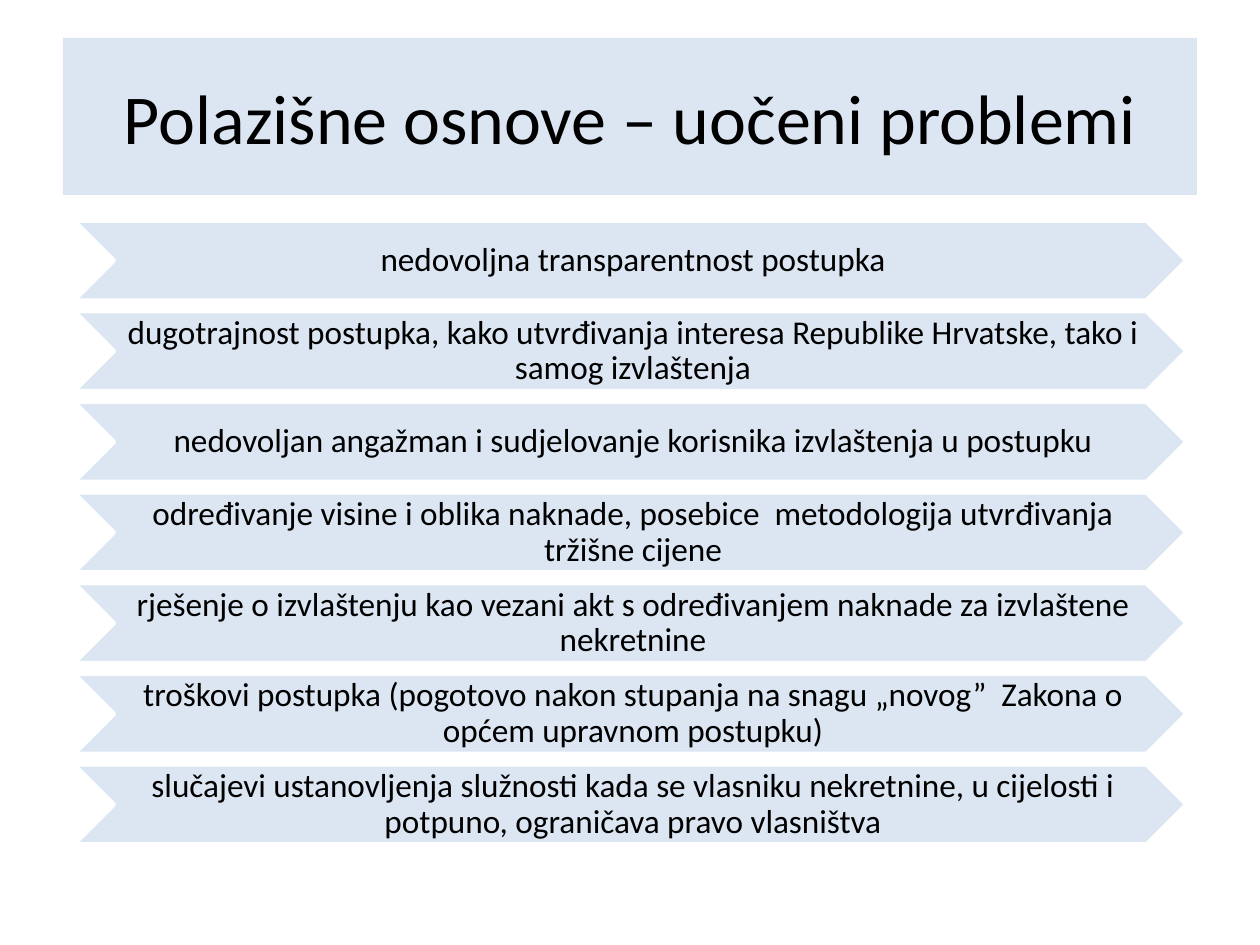
from dataclasses import dataclass

from pptx import Presentation
from pptx.dml.color import RGBColor as RGB
from pptx.enum.shapes import MSO_SHAPE as Shape
from pptx.enum.text import MSO_ANCHOR as Anchor, PP_ALIGN as Align
from pptx.util import Pt

PX = 914400 / 126


@dataclass(frozen=True)
class Theme:
    font: str = "Calibri"
    band: RGB = RGB(0xDC, 0xE6, 0xF2)
    edge: RGB = RGB(0xFF, 0xFF, 0xFF)
    ink: RGB = RGB(0, 0, 0)
    title_size: int = 40
    item_size: int = 19


THEME = Theme()

TITLE = "Polazišne osnove – uočeni problemi"
PROBLEMS = [
    "nedovoljna transparentnost postupka",
    "dugotrajnost postupka, kako utvrđivanja interesa Republike Hrvatske, tako i samog izvlaštenja",
    "nedovoljan angažman i sudjelovanje korisnika izvlaštenja u postupku",
    "određivanje visine i oblika naknade, posebice  metodologija utvrđivanja tržišne cijene",
    "rješenje o izvlaštenju kao vezani akt s određivanjem naknade za izvlaštene nekretnine",
    "troškovi postupka (pogotovo nakon stupanja na snagu „novog”  Zakona o općem upravnom postupku)",
    "slučajevi ustanovljenja služnosti kada se vlasniku nekretnine, u cijelosti i potpuno, "
    "ograničava pravo vlasništva",
]


def emu(*lengths):
    return [round(length * PX) for length in lengths]


def add_band(slide, kind, box):
    sp = slide.shapes.add_shape(kind, *emu(*box))
    sp.shadow.inherit = False
    sp.fill.solid()
    sp.fill.fore_color.rgb = THEME.band
    sp.line.fill.background()
    return sp


def write(sp, text, size, margins, spacing=1.0):
    tf = sp.text_frame
    tf.word_wrap = True
    tf.vertical_anchor = Anchor.MIDDLE
    tf.margin_left, tf.margin_top, tf.margin_right, tf.margin_bottom = emu(*margins)
    p = tf.paragraphs[0]
    p.alignment = Align.CENTER
    p.line_spacing = spacing
    r = p.add_run()
    r.text = text
    r.font.name = THEME.font
    r.font.size = Pt(size)
    r.font.color.rgb = THEME.ink


def add_title(slide, box, text):
    sp = add_band(slide, Shape.RECTANGLE, box)
    write(sp, text, THEME.title_size, (13, 6, 13, 6))


def add_chevron_row(slide, box, text):
    left, top, width, height = box
    sp = add_band(slide, Shape.CHEVRON, box)
    sp.line.color.rgb = THEME.edge
    sp.line.width = Pt(2)
    label = slide.shapes.add_textbox(*emu(left + 40, top, width - 79, height))
    write(label, text, THEME.item_size, (4, 1, 0, 1), 0.9)


def add_chevron_list(slide, box, items, row_height=79):
    left, top, width, height = box
    pitch = (height - row_height) / (len(items) - 1)
    for i, text in enumerate(items):
        add_chevron_row(slide, (left, top + i * pitch, width, row_height), text)


def main():
    prs = Presentation()
    prs.slide_width, prs.slide_height = emu(1260, 945)
    s = prs.slides.add_slide(prs.slide_layouts[6])
    add_title(s, (63, 38, 1134, 157), TITLE)
    add_chevron_list(s, (75, 221, 1111, 623), PROBLEMS)
    prs.save("out.pptx")


if __name__ == "__main__":
    main()
